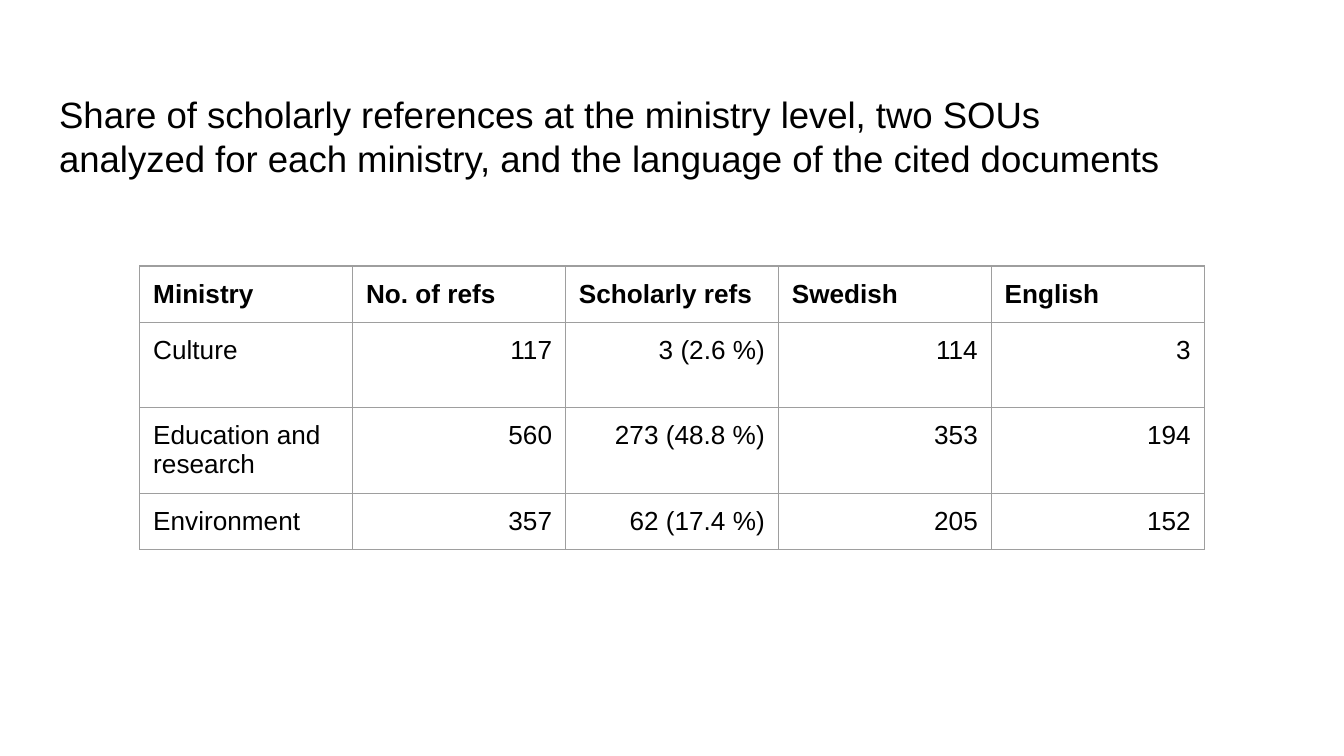
"""Build a slide with a table of scholarly references per ministry."""
from lxml.etree import SubElement
from pptx import Presentation
from pptx.dml.color import RGBColor
from pptx.enum.text import MSO_ANCHOR, MSO_AUTO_SIZE, PP_ALIGN
from pptx.oxml.ns import qn
from pptx.util import Inches, Pt


def format_text(paragraph, size, align=PP_ALIGN.LEFT, bold=False, color="000000"):
    paragraph.alignment = align
    for run in paragraph.runs:
        run.font.name = "Arial"
        run.font.size = Pt(size)
        run.font.bold = bold
        run.font.color.rgb = RGBColor.from_string(color)


def add_borders(cell, color, width):
    properties = cell._tc.get_or_add_tcPr()
    for side in ("a:lnL", "a:lnR", "a:lnT", "a:lnB"):
        border = SubElement(properties, qn(side), w=str(Pt(width)))
        fill = SubElement(border, qn("a:solidFill"))
        SubElement(fill, qn("a:srgbClr"), val=color)


presentation = Presentation()
presentation.slide_width = Inches(10)
presentation.slide_height = Inches(10 * 9 / 16)
slide = presentation.slides.add_slide(presentation.slide_layouts[5])

title = slide.shapes.title
title.left, title.top = Inches(0.34), Inches(0.61)
title.width, title.height = Inches(8.62), Inches(0.83)
heading = title.text_frame
heading.text = (
    "Share of scholarly references at the ministry level, two SOUs "
    "analyzed for each ministry, and the language of the cited documents"
)
heading.auto_size = MSO_AUTO_SIZE.NONE
heading.word_wrap = True
heading.vertical_anchor = MSO_ANCHOR.BOTTOM
heading.margin_left = heading.margin_right = Inches(0.1)
heading.margin_top = heading.margin_bottom = Inches(0.1)
format_text(heading.paragraphs[0], 19.6)

reference_rows = [
    ("Ministry", "No. of refs", "Scholarly refs", "Swedish", "English"),
    ("Culture", "117", "3 (2.6 %)", "114", "3"),
    ("Education and research", "560", "273 (48.8 %)", "353", "194"),
    ("Environment", "357", "62 (17.4 %)", "205", "152"),
]
row_heights = [0.42, 0.63, 0.64, 0.42]

references = slide.shapes.add_table(
    len(reference_rows), len(reference_rows[0]),
    Inches(1.04), Inches(1.98), Inches(7.92), Inches(sum(row_heights)),
).table
references.first_row = False
references.horz_banding = False

for row_index, (values, height) in enumerate(zip(reference_rows, row_heights)):
    references.rows[row_index].height = Inches(height)
    for column_index, value in enumerate(values):
        cell = references.cell(row_index, column_index)
        cell.text_frame.text = value
        cell.margin_left = cell.margin_right = Inches(0.1)
        cell.margin_top = cell.margin_bottom = Inches(0.1)
        is_header = row_index == 0
        is_number = not is_header and column_index > 0
        align = PP_ALIGN.RIGHT if is_number else PP_ALIGN.LEFT
        format_text(cell.text_frame.paragraphs[0], 14, align, is_header)
        add_borders(cell, "9E9E9E", 0.75)
        cell.fill.background()

presentation.save("out.pptx")
